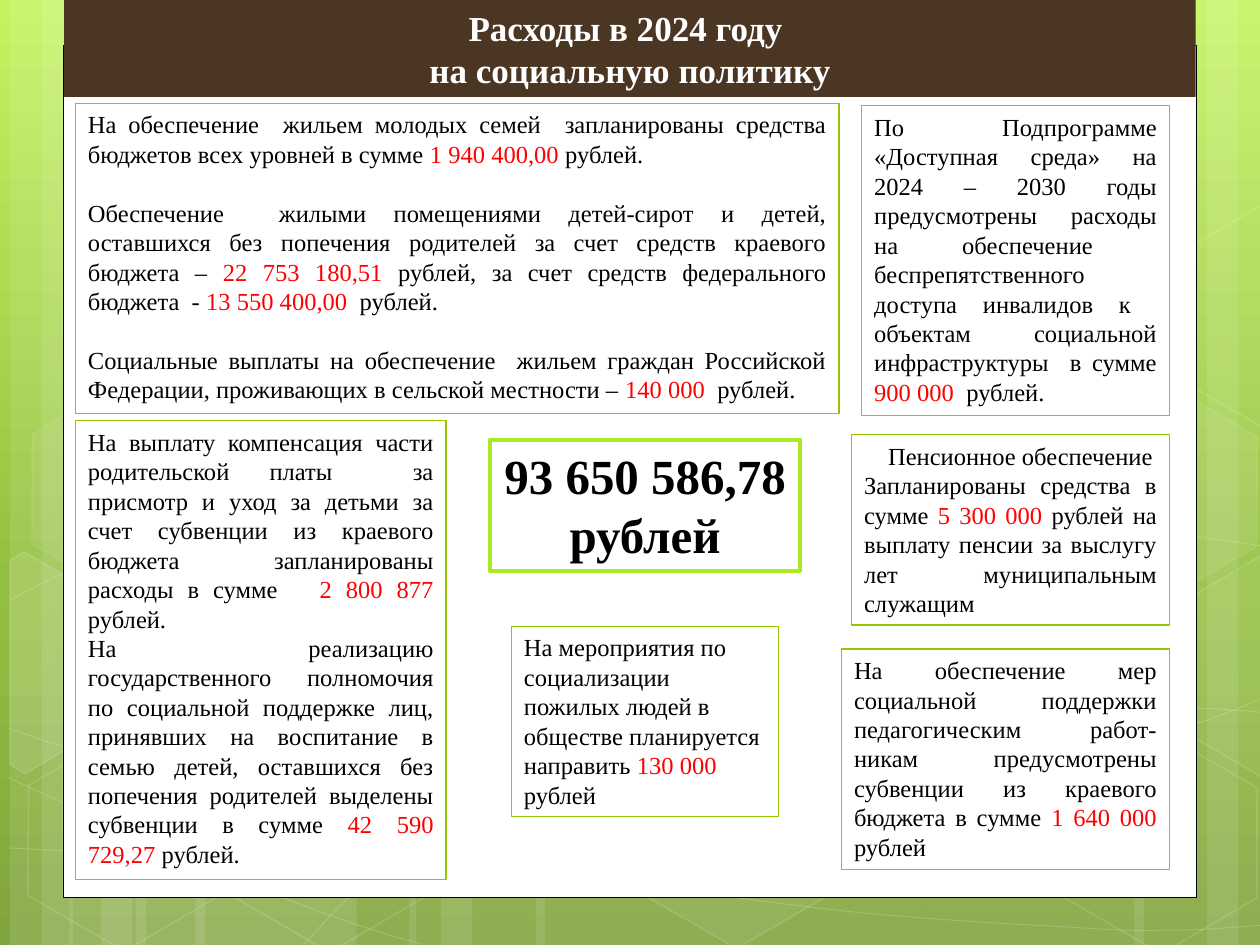
from copy import deepcopy
from dataclasses import dataclass

from lxml.etree import SubElement
from pptx import Presentation
from pptx.dml.color import RGBColor as RGB
from pptx.enum.shapes import MSO_SHAPE as SHAPE
from pptx.enum.text import MSO_ANCHOR as ANCHOR, MSO_AUTO_SIZE as AUTO, PP_ALIGN as ALIGN
from pptx.oxml.ns import qn
from pptx.util import Inches, Pt


@dataclass(frozen=True)
class Theme:
    font: str = "Times New Roman"
    body: int = 14
    title: int = 20
    total: int = 28
    white: str = "FFFFFF"
    black: str = "000000"
    amount: str = "FF0000"
    banner: str = "4A3622"
    border: str = "94C600"
    accent: str = "AAEA25"
    backdrop: tuple = ((0, "C3F35F"), (0.62, "93BF3F"), (1, "81A53E"))


THEME = Theme()


def write_text(tf, text, size=THEME.body, color=THEME.black, bold=False,
               align=ALIGN.JUSTIFY, gap=0, first_indent=0):
    for i, line in enumerate(text.split("\n")):
        p = tf.paragraphs[0] if i == 0 else tf.add_paragraph()
        p.alignment = align
        if i and gap:
            p.space_before = Pt(gap)
        if i == 0 and first_indent:
            p._p.get_or_add_pPr().set("indent", str(Inches(first_indent)))
        for j, part in enumerate(line.split("|")):
            if not part:
                continue
            r = p.add_run()
            r.text = part
            r.font.name = THEME.font
            r.font.size = Pt(size)
            r.font.bold = bold
            r.font.color.rgb = RGB.from_string(THEME.amount if j % 2 else color)


class SlideBuilder:
    def __init__(self, theme, slide):
        self.theme = theme
        self.s = slide

    def paint(self, fmt, color, alpha):
        fmt.solid()
        fmt.fore_color.rgb = RGB.from_string(color)
        if alpha < 100:
            clr = fmt._xPr.find(qn("a:solidFill"))[0]
            SubElement(clr, qn("a:alpha")).set("val", str(alpha * 1000))

    def style(self, sp, fill=None, fill_alpha=100, line=None, width=1, line_alpha=100):
        if fill and fill_alpha:
            self.paint(sp.fill, fill, fill_alpha)
        else:
            sp.fill.background()
        if line:
            sp.line.width = Pt(width)
            self.paint(sp.line.fill, line, line_alpha)
        else:
            sp.line.fill.background()
        return sp

    def background(self):
        fill = self.s.background.fill
        fill.gradient()
        fill.gradient_angle = 270
        stop_list = self.s.element.find(".//" + qn("a:gsLst"))
        stop_list.append(deepcopy(stop_list[-1]))
        for stop, (pos, color) in zip(fill.gradient_stops, self.theme.backdrop):
            stop.position = pos
            stop.color.rgb = RGB.from_string(color)

    def shape(self, kind, at, **look):
        sp = self.s.shapes.add_shape(kind, *map(Inches, at))
        sp.shadow.inherit = False
        return self.style(sp, **look)

    def hexagon(self, x, y, fill_alpha, line_alpha):
        sp = self.shape(SHAPE.HEXAGON, (x, y, 1.75, 1.52), fill=self.theme.white,
                        fill_alpha=fill_alpha, line=self.theme.white, line_alpha=line_alpha)
        sp.adjustments[0] = 0.285
        sp.adjustments[1] = 1.155
        sp.rotation = 30

    def outline(self, points, close, **look):
        start, *rest = [(Inches(x), Inches(y)) for x, y in points]
        fb = self.s.shapes.build_freeform(*start)
        fb.add_line_segments(rest, close=close)
        sp = fb.convert_to_shape()
        sp.shadow.inherit = False
        return self.style(sp, line=self.theme.white, **look)

    def curve(self, knots):
        sp = self.outline(knots, close=False, width=0.5, line_alpha=20)
        segments = sp.element.findall(".//" + qn("a:lnTo"))
        outline = segments[0].getparent()
        for i in range(0, len(segments), 3):
            cubic = SubElement(outline, qn("a:cubicBezTo"))
            for segment in segments[i:i + 3]:
                cubic.append(segment[0])
                outline.remove(segment)

    def text_box(self, at, text, look, wrap=True, **fmt):
        sp = self.style(self.s.shapes.add_textbox(*map(Inches, at)), **look)
        tf = sp.text_frame
        tf.word_wrap = wrap
        tf.auto_size = AUTO.SHAPE_TO_FIT_TEXT
        tf.vertical_anchor = ANCHOR.TOP
        write_text(tf, text, **fmt)


BARS = [(1.08, 1.75), (0.08, 0.5), (0.33, 0.83), (1.55, 1.75), (0.55, 0.5), (0.8, 0.83),
        (7.33, 1.75), (9.58, 0.5), (9, 0.83), (4.25, 3.08), (3.25, 0.5), (3.5, 0.83)]

CURVES = [
    [(0.07, 6.73), (0.61, 6.76), (1.15, 6.79), (1.9, 6.78), (2.65, 6.77), (3.58, 6.75),
     (4.58, 6.65), (5.58, 6.55), (7, 6.36), (7.92, 6.17), (8.83, 5.98), (9.77, 5.68), (10.07, 5.51)],
    [(0.07, 4.77), (0.36, 4.61), (0.65, 4.46), (1.21, 4.31), (1.78, 4.16), (2.59, 3.94),
     (3.47, 3.87), (4.36, 3.8), (5.44, 3.79), (6.54, 3.87), (7.64, 3.95), (9.47, 4.26), (10.07, 4.34)],
    [(0.06, 6.17), (1.27, 6.72), (2.47, 7.27), (3.34, 7.49)],
    [(0.07, 5.78), (0.38, 5.89), (0.7, 6), (1.28, 6.16), (1.86, 6.31), (2.73, 6.56),
     (3.57, 6.73), (4.4, 6.9), (5.45, 7.08), (6.28, 7.18), (7.11, 7.29), (8, 7.33),
     (8.53, 7.36), (9.05, 7.4), (9.19, 7.38), (9.45, 7.38), (9.71, 7.37), (9.89, 7.35), (10.07, 7.34)],
    [(2.42, 7.49), (2.6, 7.29), (2.78, 7.09), (3.02, 6.91), (3.26, 6.73), (3.6, 6.53),
     (3.88, 6.39), (4.16, 6.25), (4.33, 6.19), (4.7, 6.09), (5.06, 5.99), (5.73, 5.85),
     (6.08, 5.78), (6.44, 5.71), (6.49, 5.71), (6.8, 5.69), (7.11, 5.66), (7.6, 5.63),
     (7.94, 5.62), (8.29, 5.61), (8.86, 5.62), (8.86, 5.62), (8.86, 5.62), (9.53, 5.62),
     (9.53, 5.62), (9.71, 5.63), (9.88, 5.64), (9.97, 5.65), (10.06, 5.66), (10.03, 5.65),
     (10.06, 5.66)],
]
CURVES[-1].remove((9.53, 5.62))
CURVES[-1].insert(23, (9.53, 5.62))

HEXAGONS = [(4.97, 5.89, 6, 12), (0.11, 5.91, 0, 12), (0.14, 3.12, 7, 8),
            (1.74, 5.92, 0, 12), (8.34, 5.93, 0, 12), (8.34, 3.14, 7, 8)]

CUT_HEXAGONS = [
    (10, [(0.08, 4.45), (0.19, 4.38), (0.96, 4.82), (0.95, 5.7), (0.2, 6.14), (0.08, 6.07)]),
    (4, [(9.26, 4.85), (10.01, 4.41), (10.09, 4.46), (10.09, 6.13), (10.02, 6.17), (9.26, 5.73)]),
    (0, [(9.26, 2.07), (10.01, 1.63), (10.1, 1.68), (10.09, 3.35), (10.02, 3.39), (9.26, 2.95)]),
]

EXPENSES = [
    ((6.76, 3.45, 2.52, 1.51), "Пенсионное обеспечение\nЗапланированы средства в сумме |5 300 000 |рублей "
     "на выплату пенсии за выслугу лет муниципальным служащим", {"first_indent": 0.19}),
    ((6.84, 0.84, 2.44, 2.46), "По Подпрограмме «Доступная среда» на 2024 – 2030 годы предусмотрены "
     "расходы на обеспечение  беспрепятственного доступа инвалидов к  объектам социальной "
     "инфраструктуры  в сумме |900 000  |рублей.", {}),
    ((6.68, 5.15, 2.6, 1.75), "На обеспечение мер социальной поддержки педагогическим работ-никам "
     "предусмотрены субвенции из краевого бюджета в сумме |1 640 000| рублей", {}),
    ((0.6, 0.82, 6.06, 2.46), "На обеспечение  жильем молодых семей  запланированы средства бюджетов "
     "всех уровней в сумме |1 940 400,00 |рублей.\n"
     "Обеспечение  жилыми помещениями детей-сирот и детей, оставшихся без попечения родителей "
     "за счет средств краевого бюджета – |22 753 180,51 |рублей, за счет средств федерального "
     "бюджета  - |13 550 400,00  |рублей.\n"
     "Социальные выплаты на обеспечение  жильем граждан Российской Федерации, проживающих "
     "в сельской местности – |140 000  |рублей.", {"gap": 16.8}),
    ((0.6, 3.34, 2.94, 3.64), "На выплату компенсация части родительской платы  за присмотр и уход "
     "за детьми за счет субвенции из краевого бюджета запланированы расходы в сумме   "
     "|2 800 877 |рублей.\n"
     "На реализацию государственного полномочия по социальной поддержке лиц, принявших на "
     "воспитание в семью детей, оставшихся без попечения родителей выделены субвенции в сумме "
     "|42 590 729,27 |рублей.", {}),
    ((4.06, 4.97, 2.12, 1.51), "На мероприятия по социализации пожилых людей в обществе планируется "
     "направить |130 000 |рублей", {"align": ALIGN.LEFT}),
]


def main():
    prs = Presentation()
    prs.slide_width, prs.slide_height = Inches(10), Inches(7.5)
    b = SlideBuilder(THEME, prs.slides.add_slide(prs.slide_layouts[6]))
    b.background()
    for x, width in BARS:
        b.shape(SHAPE.RECTANGLE, (x, 0, width, 7.5), fill=THEME.white, fill_alpha=10)
    for knots in CURVES:
        b.curve(knots)
    for hexagon in HEXAGONS:
        b.hexagon(*hexagon)
    for alpha, points in CUT_HEXAGONS:
        b.outline(points, close=True, fill=THEME.white, fill_alpha=alpha, line_alpha=12)
    b.shape(SHAPE.RECTANGLE, (0.5, 0.36, 9, 6.76), fill=THEME.white, line=THEME.black, width=0.5)
    b.text_box((0.51, 0, 8.98, 0.77), "Расходы в 2024 году \nна социальную политику",
               {"fill": THEME.banner}, size=THEME.title, color=THEME.white, bold=True,
               align=ALIGN.CENTER)
    b.text_box((3.89, 3.49, 2.46, 1.04), "93 650 586,78\nрублей",
               {"fill": THEME.white, "line": THEME.accent, "width": 2.25}, wrap=False,
               size=THEME.total, bold=True, align=ALIGN.CENTER)
    for at, text, fmt in EXPENSES:
        b.text_box(at, text, {"line": THEME.border, "width": 0.75}, **fmt)
    prs.save("out.pptx")


if __name__ == "__main__":
    main()
